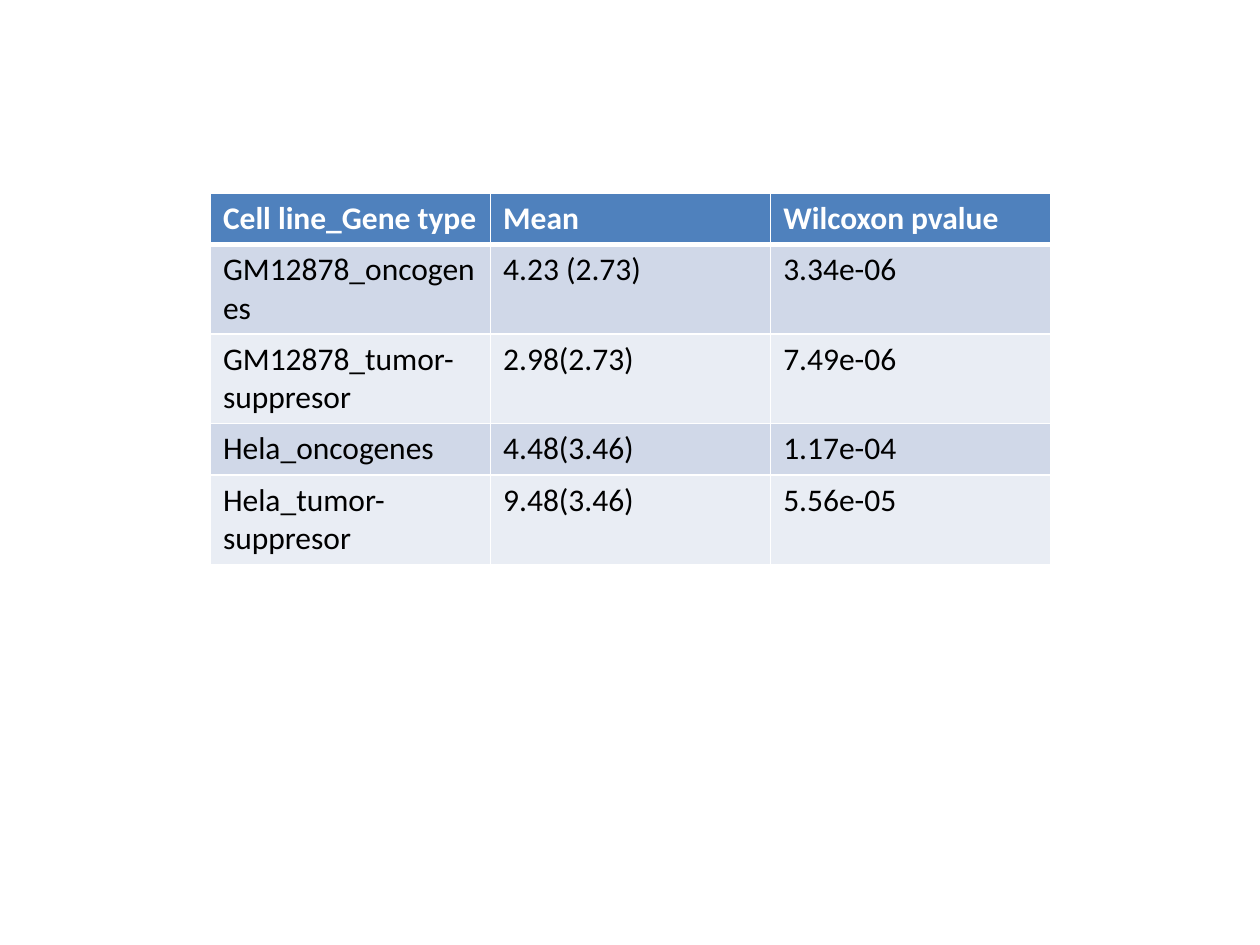
from lxml.etree import SubElement
from pptx import Presentation
from pptx.dml.color import RGBColor as RGB
from pptx.oxml.ns import qn
from pptx.util import Inches, Pt

COLORS = {
    "header": "4F81BD",
    "odd_band": "D0D8E8",
    "even_band": "E9EDF4",
    "header_text": "FFFFFF",
    "body_text": "000000",
    "grid": "FFFFFF",
}

RESULTS = [
    ("Cell line_Gene type", "Mean", "Wilcoxon pvalue"),
    ("GM12878_oncogenes", "4.23 (2.73)", "3.34e-06"),
    ("GM12878_tumor-suppresor", "2.98(2.73)", "7.49e-06"),
    ("Hela_oncogenes", "4.48(3.46)", "1.17e-04"),
    ("Hela_tumor-suppresor", "9.48(3.46)", "5.56e-05"),
]


class SlideBuilder:
    font = "Calibri"
    size = Pt(18)
    grid_width = Pt(1)
    header_rule = Pt(3)

    def __init__(self, slide):
        self.slide = slide

    def add_results_table(self, rows, left, top, width, row_height):
        table = self.slide.shapes.add_table(
            len(rows), len(rows[0]), left, top, width, row_height * len(rows)
        ).table
        for row_index, values in enumerate(rows):
            for column_index, value in enumerate(values):
                self.format_cell(table.cell(row_index, column_index), value, row_index)

    def format_cell(self, cell, value, row_index):
        is_header = row_index == 0
        self.set_borders(
            cell,
            top=self.header_rule if row_index == 1 else self.grid_width,
            bottom=self.header_rule if is_header else self.grid_width,
        )
        band = "header" if is_header else "odd_band" if row_index % 2 else "even_band"
        cell.fill.solid()
        cell.fill.fore_color.rgb = RGB.from_string(COLORS[band])
        run = cell.text_frame.paragraphs[0].add_run()
        run.text = value
        run.font.name = self.font
        run.font.size = self.size
        run.font.bold = is_header
        text_color = COLORS["header_text" if is_header else "body_text"]
        run.font.color.rgb = RGB.from_string(text_color)

    def set_borders(self, cell, top, bottom):
        """Draw the four cell edges; must run before the cell is filled."""
        properties = cell._tc.get_or_add_tcPr()
        edges = {"L": self.grid_width, "R": self.grid_width, "T": top, "B": bottom}
        for edge, line_width in edges.items():
            line = SubElement(properties, qn(f"a:ln{edge}"), w=str(int(line_width)))
            fill = SubElement(line, qn("a:solidFill"))
            SubElement(fill, qn("a:srgbClr"), val=COLORS["grid"])


def main():
    deck = Presentation()
    deck.slide_width, deck.slide_height = Inches(10), Inches(7.5)
    blank_layout = deck.slide_layouts[6]
    builder = SlideBuilder(deck.slides.add_slide(blank_layout))
    builder.add_results_table(
        RESULTS, Inches(1.67), Inches(1.53), Inches(6.67), Inches(0.41)
    )
    deck.save("out.pptx")


if __name__ == "__main__":
    main()
